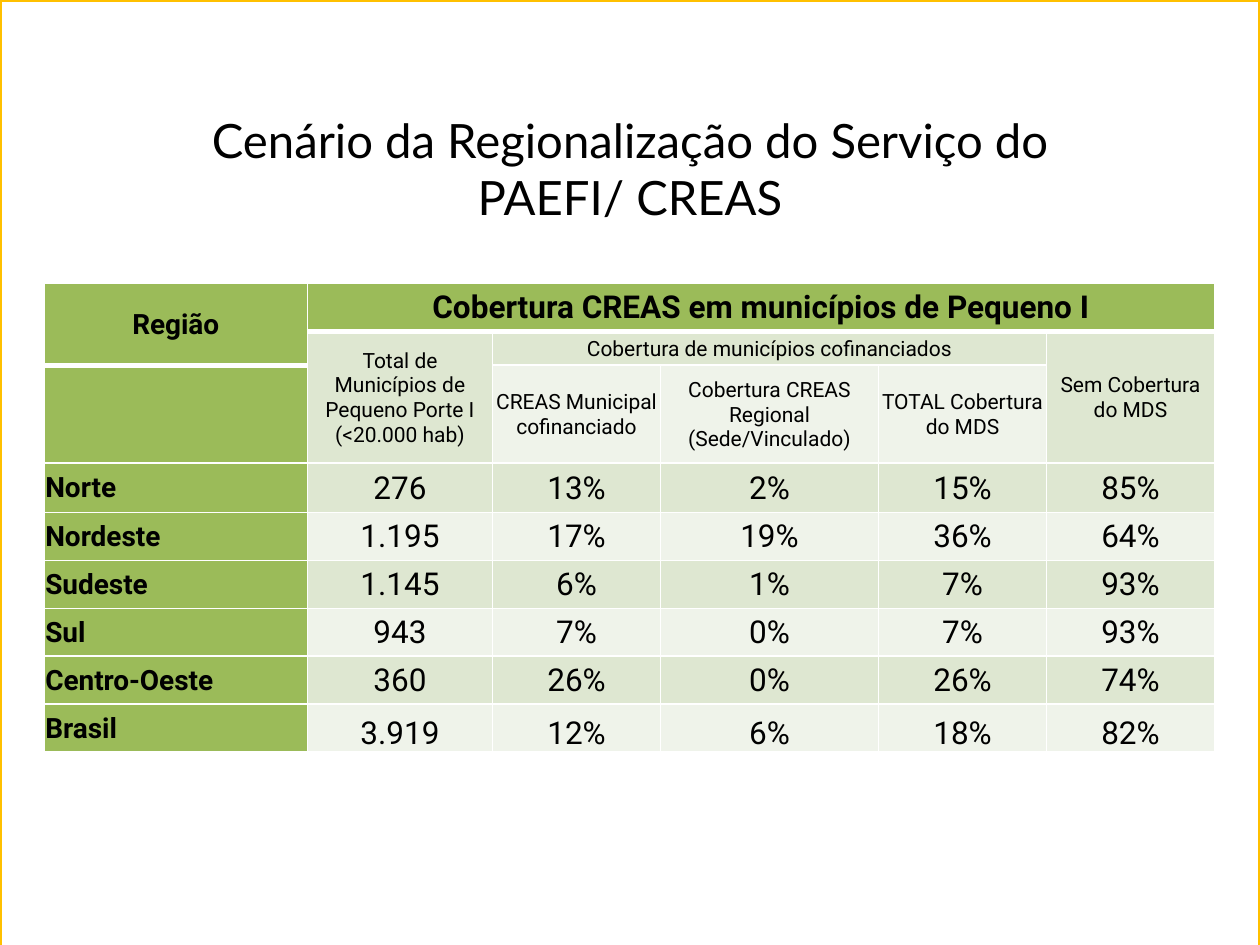
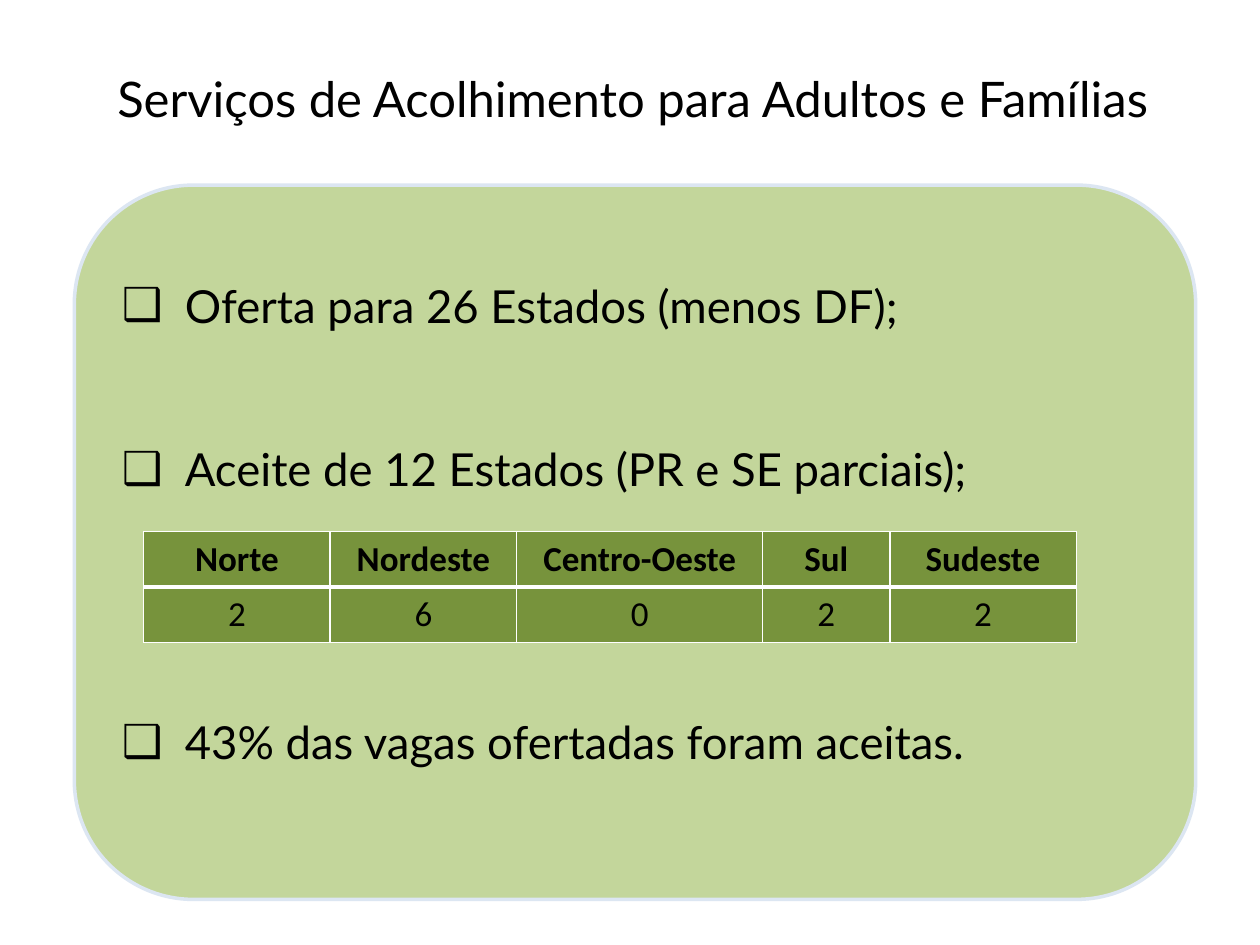
from dataclasses import dataclass

from lxml.etree import SubElement
from pptx import Presentation
from pptx.dml.color import RGBColor
from pptx.enum.shapes import MSO_SHAPE as Preset
from pptx.enum.text import MSO_ANCHOR as Anchor, MSO_AUTO_SIZE as AutoSize, PP_ALIGN as Align
from pptx.oxml.ns import qn
from pptx.util import Pt


# Theme
@dataclass(frozen=True)
class Theme:
    text: str = "000000"
    white: str = "FFFFFF"
    frame: str = "FFC000"
    header: str = "9BBB59"
    band_dark: str = "DEE7D1"
    band_light: str = "EFF3EA"
    card: str = "C3D69B"
    card_line: str = "DCE6F2"
    states: str = "77933C"
    text_font: str = "Lato"
    coverage_font: str = "Roboto"
    states_font: str = "Calibri"
    bullet_size: float = 26
    states_size: float = 20
    value_size: float = 18
    region_size: float = 16
    label_size: float = 12
    thin: float = 1
    thick: float = 3


THEME = Theme()
SLIDE_W, SLIDE_H = 720, 540

# Content: text, size, left, top, width, height
COVERAGE_TITLE = ("Cenário da Regionalização do Serviço do\nPAEFI/ CREAS", 27, 0, 63.5, 720, 65)
SHELTER_TITLE = ("Serviços de Acolhimento para Adultos e Famílias", 28, 1.5, 39, 720, 34)

# Header cells: first row, first column, last row, last column, text, size, bold
COVERAGE_HEADERS = [
    (0, 0, 1, 0, "Região", THEME.region_size, True),
    (0, 1, 0, 5, "Cobertura CREAS em municípios de Pequeno I", THEME.value_size, True),
    (1, 1, 2, 1, "Total de Municípios de Pequeno Porte I (<20.000 hab)", THEME.label_size, False),
    (1, 2, 1, 4, "Cobertura de municípios cofinanciados", THEME.label_size, False),
    (1, 5, 2, 5, "Sem Cobertura do MDS", THEME.label_size, False),
    (2, 2, 2, 2, "CREAS Municipal cofinanciado", THEME.label_size, False),
    (2, 3, 2, 3, "Cobertura CREAS Regional (Sede/Vinculado)", THEME.label_size, False),
    (2, 4, 2, 4, "TOTAL Cobertura do MDS", THEME.label_size, False),
]
COVERAGE = [
    ("Norte", "276", "13%", "2%", "15%", "85%"),
    ("Nordeste", "1.195", "17%", "19%", "36%", "64%"),
    ("Sudeste", "1.145", "6%", "1%", "7%", "93%"),
    ("Sul", "943", "7%", "0%", "7%", "93%"),
    ("Centro-Oeste", "360", "26%", "0%", "26%", "74%"),
    ("Brasil", "3.919", "12%", "6%", "18%", "82%"),
]
COVERAGE_WIDTHS = [150.5, 105.8, 96, 124.6, 96, 96]
COVERAGE_HEIGHTS = [27.4, 19, 56, 28.2] + [27.4] * 5

# Bullets with the number of line heights left free above each
BULLETS = [
    ("Oferta para 26 Estados (menos DF);", 0),
    ("Aceite de 12 Estados (PR e SE parciais);", 2),
    ("43% das vagas ofertadas foram aceitas.", 4),
]
STATES = [
    ("Norte", "Nordeste", "Centro-Oeste", "Sul", "Sudeste"),
    ("2", "6", "0", "2", "2"),
]
STATES_WIDTHS = [106.6, 106.6, 140.6, 72.6, 106.6]
STATES_HEIGHTS = [31.6, 31.6]


# Shared helpers
def color(code):
    return RGBColor.from_string(code)


def place(shape, *box):
    shape.left, shape.top, shape.width, shape.height = map(Pt, box)


def format_runs(para, font, size, bold=False):
    for span in para.runs:
        span.font.name = font
        span.font.size = Pt(size)
        span.font.bold = bold
        span.font.color.rgb = color(THEME.text)


def prepare_frame(frame, anchor):
    frame.margin_left = frame.margin_right = frame.margin_top = frame.margin_bottom = 0
    frame.word_wrap = True
    frame.auto_size = AutoSize.NONE
    frame.vertical_anchor = anchor


def set_title(page, text, size, *box):
    title = page.shapes.title
    place(title, *box)
    prepare_frame(title.text_frame, Anchor.TOP)
    title.text_frame.text = text
    for para in title.text_frame.paragraphs:
        para.alignment = Align.CENTER
        format_runs(para, THEME.text_font, size)


def add_panel(page, preset, box, fill, line):
    """Add a filled panel behind the placeholders."""
    panel = page.shapes.add_shape(preset, *map(Pt, box))
    panel.shadow.inherit = False
    panel.fill.solid()
    panel.fill.fore_color.rgb = color(fill)
    panel.line.color.rgb = color(line)
    panel.line.width = Pt(2)
    page.shapes.element.insert(2, panel.element)


def add_grid(page, left, top, widths, heights):
    grid = page.shapes.add_table(len(heights), len(widths), Pt(left), Pt(top),
                                 Pt(sum(widths)), Pt(sum(heights))).table
    for column, width in zip(grid.columns, widths):
        column.width = Pt(width)
    for row, height in zip(grid.rows, heights):
        row.height = Pt(height)
    return grid


def style_cell(cell, fill, bottom):
    props = cell._tc.get_or_add_tcPr()
    for side in "LRTB":
        width = bottom if side == "B" else THEME.thin
        edge = SubElement(props, qn(f"a:ln{side}"), w=str(Pt(width)))
        SubElement(SubElement(edge, qn("a:solidFill")), qn("a:srgbClr"), val=THEME.white)
    cell.fill.solid()
    cell.fill.fore_color.rgb = color(fill)


def write_cell(cell, text, font, size, bold, align=Align.CENTER):
    cell.text = text
    para = cell.text_frame.paragraphs[0]
    para.alignment = align
    format_runs(para, font, size, bold)


# Slide 1: coverage by region
def build_coverage(deck):
    page = deck.slides.add_slide(deck.slide_layouts[5])
    add_panel(page, Preset.RECTANGLE, (0, 0, SLIDE_W, 544), THEME.white, THEME.frame)
    set_title(page, *COVERAGE_TITLE)

    grid = add_grid(page, 25.2, 162, COVERAGE_WIDTHS, COVERAGE_HEIGHTS)
    for r in range(len(COVERAGE_HEIGHTS)):
        for c in range(len(COVERAGE_WIDTHS)):
            cell = grid.cell(r, c)
            band = THEME.band_dark if r % 2 else THEME.band_light
            under_header = r == 0 or (r, c) == (1, 0)
            style_cell(cell, THEME.header if r == 0 or c == 0 else band,
                       THEME.thick if under_header else THEME.thin)
            cell.margin_left = cell.margin_right = cell.margin_top = Pt(0.7)
            cell.margin_bottom = 0
            cell.vertical_anchor = Anchor.MIDDLE

    for r, c, last_r, last_c, text, size, bold in COVERAGE_HEADERS:
        cell = grid.cell(r, c)
        if (r, c) != (last_r, last_c):
            cell.merge(grid.cell(last_r, last_c))
        write_cell(cell, text, THEME.coverage_font, size, bold)

    first_row = len(COVERAGE_HEIGHTS) - len(COVERAGE)
    for r, (region, *values) in enumerate(COVERAGE, first_row):
        write_cell(grid.cell(r, 0), region, THEME.coverage_font, THEME.region_size, True, Align.LEFT)
        for c, value in enumerate(values, 1):
            write_cell(grid.cell(r, c), value, THEME.coverage_font, THEME.value_size, False)
    # The total row sits on its bottom edge
    for c in range(1, len(COVERAGE_WIDTHS)):
        grid.cell(len(COVERAGE_HEIGHTS) - 1, c).vertical_anchor = Anchor.BOTTOM


# Slide 2: shelter services
def build_shelter(deck):
    page = deck.slides.add_slide(deck.slide_layouts[1])
    add_panel(page, Preset.ROUNDED_RECTANGLE, (42.5, 105.8, 640.8, 408.2),
              THEME.card, THEME.card_line)
    set_title(page, *SHELTER_TITLE)

    body = page.placeholders[1]
    place(body, 69.6, 158.7, 586, 303)
    frame = body.text_frame
    prepare_frame(frame, Anchor.TOP)
    frame.text = "\n".join(text for text, _ in BULLETS)
    for para, (_, free_lines) in zip(frame.paragraphs, BULLETS):
        para.space_before = Pt(free_lines * THEME.bullet_size * 1.2)
        para.alignment = Align.JUSTIFY
        props = para._p.get_or_add_pPr()
        props.set("marL", str(Pt(36)))
        props.set("indent", str(-Pt(36)))
        SubElement(props, qn("a:buChar"), char="❑")
        format_runs(para, THEME.text_font, THEME.bullet_size)

    grid = add_grid(page, 82.1, 303.8, STATES_WIDTHS, STATES_HEIGHTS)
    for r, row in enumerate(STATES):
        for c, text in enumerate(row):
            cell = grid.cell(r, c)
            style_cell(cell, THEME.states, THEME.thin if r else THEME.thick)
            write_cell(cell, text, THEME.states_font, THEME.states_size, r == 0)


def main():
    deck = Presentation()
    deck.slide_width, deck.slide_height = Pt(SLIDE_W), Pt(SLIDE_H)
    build_coverage(deck)
    build_shelter(deck)
    deck.save("out.pptx")


if __name__ == "__main__":
    main()
